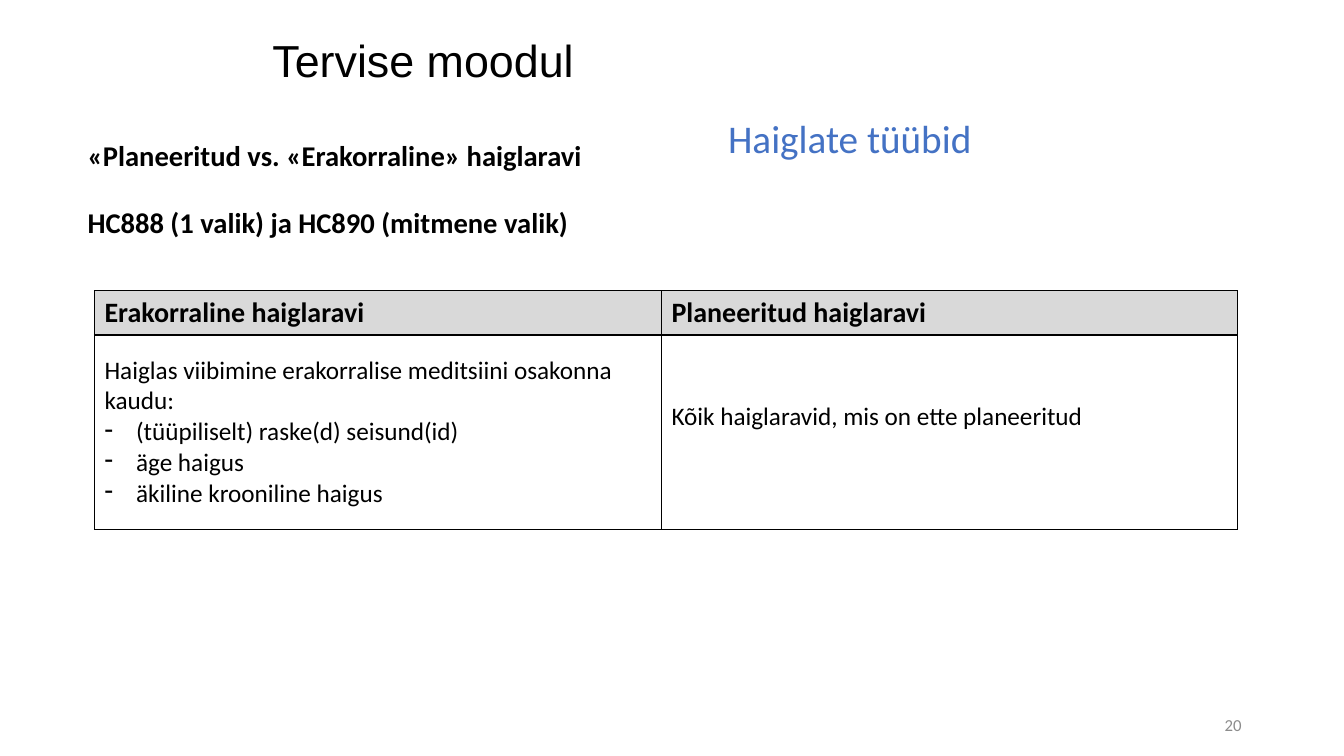
from lxml.etree import SubElement
from pptx import Presentation
from pptx.dml.color import RGBColor
from pptx.enum.text import MSO_ANCHOR as Anchor, PP_ALIGN as Align
from pptx.oxml.ns import qn
from pptx.util import Pt

PX = 9525
BLACK = RGBColor(0x00, 0x00, 0x00)
BLUE = RGBColor(0x44, 0x72, 0xC4)
GREY = RGBColor(0x8C, 0x8C, 0x8C)
HEADER_GREY = RGBColor(0xD9, 0xD9, 0xD9)
INDENT = 30

HEADERS = ["Erakorraline haiglaravi", "Planeeritud haiglaravi"]
EMERGENCY_INTRO = "Haiglas viibimine erakorralise meditsiini osakonna kaudu:"
EMERGENCY_CASES = [
    "(tüüpiliselt) raske(d) seisund(id)",
    "äge haigus",
    "äkiline krooniline haigus",
]
PLANNED_TEXT = "Kõik haiglaravid, mis on ette planeeritud"


def px(length):
    """Turn pixels into EMU."""
    return length * PX


def set_font(font, color=BLACK, **values):
    """Set font attributes from the given values."""
    for name, value in {"name": "Calibri", "bold": False, **values}.items():
        setattr(font, name, value)
    font.color.rgb = color


def add_bullet(paragraph):
    """Give a paragraph a hanging dash."""
    properties = paragraph._p.get_or_add_pPr()
    properties.set("marL", str(px(INDENT)))
    properties.set("indent", str(-px(INDENT)))
    SubElement(properties, qn("a:buChar"), char="-")


def write(frame, lines, font, layout=None, bullets_from=None):
    """Write lines as paragraphs that share a font and a layout."""
    for index, line in enumerate(lines):
        paragraph = frame.add_paragraph() if index else frame.paragraphs[0]
        paragraph.text = line
        for name, value in (layout or {}).items():
            if index or name != "space_before":
                setattr(paragraph, name, value)
        if bullets_from is not None and index >= bullets_from:
            add_bullet(paragraph)
        set_font(paragraph.font, **font)


def add_text(slide, box, lines, font, layout=None, anchor=Anchor.TOP, wrap=True):
    """Add a text box."""
    frame = slide.shapes.add_textbox(*map(px, box)).text_frame
    frame.word_wrap = wrap
    frame.vertical_anchor = anchor
    write(frame, lines, font, layout)


def add_borders(cell):
    """Draw a thin black line on each side of a cell."""
    properties = cell._tc.get_or_add_tcPr()
    for index, side in enumerate(("lnL", "lnR", "lnT", "lnB")):
        line = properties.makeelement(qn(f"a:{side}"), {"w": str(Pt(1))})
        fill = SubElement(line, qn("a:solidFill"))
        SubElement(fill, qn("a:srgbClr"), val=str(BLACK))
        properties.insert(index, line)


def add_care_table(slide, left, top, widths, heights):
    """Add the table that compares emergency and planned care."""
    frame = slide.shapes.add_table(
        len(heights), len(widths), px(left), px(top), px(sum(widths)), px(sum(heights)))
    table = frame.table
    table.first_row = table.horz_banding = False
    for column, width in zip(table.columns, widths):
        column.width = px(width)
    for row, height in zip(table.rows, heights):
        row.height = px(height)
    for cell in table.iter_cells():
        cell.fill.background()
        add_borders(cell)
    for column, header in enumerate(HEADERS):
        cell = table.cell(0, column)
        cell.fill.solid()
        cell.fill.fore_color.rgb = HEADER_GREY
        write(cell.text_frame, [header], {"size": Pt(20), "bold": True})
    emergency, planned = table.cell(1, 0), table.cell(1, 1)
    for cell, lines in ((emergency, [EMERGENCY_INTRO, *EMERGENCY_CASES]),
                        (planned, [PLANNED_TEXT])):
        cell.vertical_anchor = Anchor.MIDDLE
        write(cell.text_frame, lines, {"size": Pt(18)}, bullets_from=1)
    planned.margin_bottom = px(34)


def main():
    """Build and save the slide."""
    presentation = Presentation()
    presentation.slide_width, presentation.slide_height = px(1280), px(720)
    slide = presentation.slides.add_slide(presentation.slide_layouts[6])
    add_text(slide, (904, 671, 288, 38), ["20"], {"size": Pt(12), "color": GREY},
             {"alignment": Align.RIGHT}, Anchor.MIDDLE)
    add_text(slide, (250, 26, 798, 61), ["Tervise moodul"],
             {"size": Pt(32), "name": "Arial"})
    add_text(slide, (74, 133, 811, 104),
             ["«Planeeritud vs. «Erakorraline» haiglaravi",
              "HC888 (1 valik) ja HC890 (mitmene valik)"],
             {"size": Pt(20.4), "bold": True},
             {"line_spacing": 0.8, "space_before": Pt(28)})
    add_care_table(slide, 90, 277, (540, 549), (42, 185))
    add_text(slide, (684, 104, 253, 55), ["Haiglate tüübid"],
             {"size": Pt(28), "color": BLUE}, wrap=False)
    presentation.save("out.pptx")


if __name__ == "__main__":
    main()
